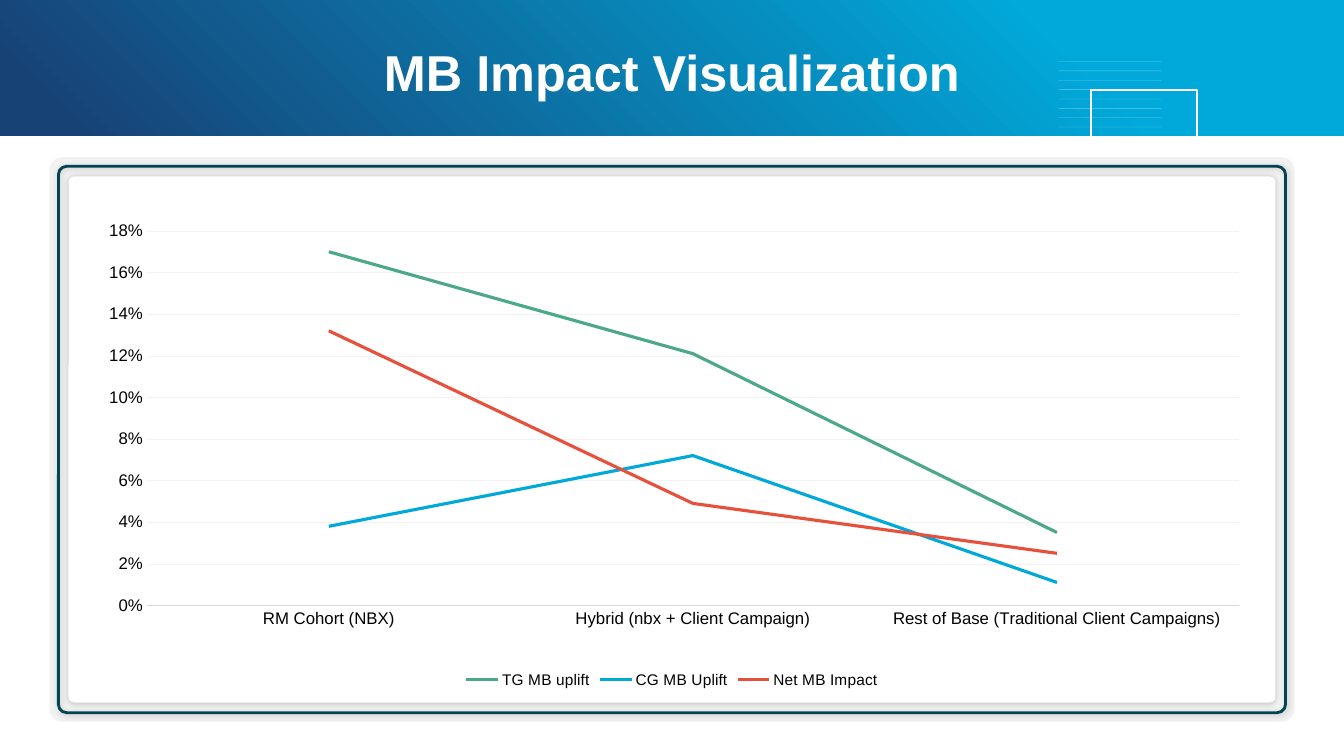
from lxml.etree import SubElement
from pptx import Presentation
from pptx.chart.data import CategoryChartData
from pptx.dml.color import RGBColor
from pptx.enum.chart import XL_CHART_TYPE, XL_LEGEND_POSITION, XL_TICK_MARK
from pptx.enum.shapes import MSO_CONNECTOR, MSO_SHAPE
from pptx.enum.text import MSO_ANCHOR, PP_ALIGN
from pptx.oxml import parse_xml
from pptx.oxml.ns import nsdecls, qn
from pptx.util import Inches, Pt

TITLE = "MB Impact Visualization"
CATEGORIES = [
    "RM Cohort (NBX)",
    "Hybrid (nbx + Client Campaign)",
    "Rest of Base (Traditional Client Campaigns)",
]
WHITE = RGBColor(0xFF, 0xFF, 0xFF)
BLACK = RGBColor(0, 0, 0)
PANEL_GREY = RGBColor(0xF2, 0xF2, 0xF2)
AXIS_GREY = RGBColor(0xD9, 0xD9, 0xD9)
FRAME_TEAL = RGBColor(0x00, 0x45, 0x54)
NAVY = RGBColor(0x17, 0x42, 0x76)
GREEN = RGBColor(0x4C, 0xA8, 0x8A)
CYAN = RGBColor(0x00, 0xA9, 0xDA)
RED = RGBColor(0xE7, 0x51, 0x3C)
SERIES = [
    ("TG MB uplift", (0.17, 0.121, 0.035), GREEN),
    ("CG MB Uplift", (0.038, 0.072, 0.011), CYAN),
    ("Net MB Impact", (0.132, 0.049, 0.025), RED),
]
# inset from the grey panel, corner ratio, fill, outline, has shadow
PANELS = [
    (0, 0.023, PANEL_GREY, None, False),
    (0.19, 0.011, WHITE, None, True),
    (0.09, 0.015, None, FRAME_TEAL, True),
]

FONT = "Arial"
WIDTH, HEIGHT = 13.33, 7.5
BANNER_HEIGHT = 0.18 * HEIGHT
MARGIN = 0.49
PANEL_TOP, PANEL_HEIGHT = 1.56, 5.6
PANEL_WIDTH = WIDTH - 2 * MARGIN
CHART_INSET_X, CHART_INSET_Y = 0.4, 0.29
PLOT_SHARES = {"x": 0.049, "y": 0.088, "w": 0.938, "h": 0.74}
STRIPE_LEFT, STRIPE_TOP, STRIPE_WIDTH = 10.5, 0.61, 1.02
STRIPE_COUNT, STRIPE_GAP = 8, 0.093
BRACKET_LEFT, BRACKET_TOP, BRACKET_WIDTH = 10.82, 0.89, 1.05


def add_box(slide, kind, left, top, width, height, fill=None, outline=None):
    shape = slide.shapes.add_shape(
        kind, Inches(left), Inches(top), Inches(width), Inches(height))
    shape.shadow.inherit = False
    if fill is None:
        shape.fill.background()
    else:
        shape.fill.solid()
        shape.fill.fore_color.rgb = fill
    if outline is None:
        shape.line.fill.background()
    else:
        shape.line.color.rgb = outline
        shape.line.width = Pt(2)
    return shape


def add_soft_shadow(shape):
    effects = shape._element.spPr.find(qn("a:effectLst"))
    effects.append(parse_xml(
        f'<a:outerShdw {nsdecls("a")} blurRad="{Pt(4)}" dist="{Pt(1)}" dir="2700000" '
        'algn="tl" rotWithShape="0"><a:srgbClr val="000000"><a:alpha val="20000"/>'
        '</a:srgbClr></a:outerShdw>'))


def add_background(slide):
    """Radial gradient over the slide, with white below the banner."""
    backdrop = add_box(slide, MSO_SHAPE.RECTANGLE, 0, 0, WIDTH, HEIGHT)
    properties = backdrop._element.spPr
    properties.find(qn("a:xfrm")).set("flipH", "1")
    stops = "".join(
        f'<a:gs pos="{share * 1000}"><a:srgbClr val="{color}"/></a:gs>'
        for share, color in ((33, NAVY), (85, CYAN), (100, CYAN)))
    properties.replace(properties.find(qn("a:noFill")), parse_xml(
        f'<a:gradFill {nsdecls("a")} rotWithShape="1"><a:gsLst>{stops}</a:gsLst>'
        '<a:path path="circle"><a:fillToRect t="100000" r="100000"/></a:path>'
        '<a:tileRect l="-100000" b="-100000"/></a:gradFill>'))
    add_box(slide, MSO_SHAPE.RECTANGLE, 0, BANNER_HEIGHT, WIDTH,
            HEIGHT - BANNER_HEIGHT, WHITE)


def add_banner_decoration(slide):
    for row in range(STRIPE_COUNT):
        y = Inches(STRIPE_TOP + row * STRIPE_GAP)
        stripe = slide.shapes.add_connector(
            MSO_CONNECTOR.STRAIGHT, Inches(STRIPE_LEFT), y,
            Inches(STRIPE_LEFT + STRIPE_WIDTH), y)
        stripe.line.color.rgb = WHITE
        stripe.line.width = Pt(0.25)
        properties = stripe._element.spPr
        color = next(properties.iter(qn("a:srgbClr")))
        SubElement(color, qn("a:alpha")).set("val", "40000")
        SubElement(properties, qn("a:effectLst"))

    right = BRACKET_LEFT + BRACKET_WIDTH
    builder = slide.shapes.build_freeform(
        Inches(BRACKET_LEFT), Inches(BANNER_HEIGHT))
    builder.add_line_segments(
        [(Inches(x), Inches(y)) for x, y in (
            (BRACKET_LEFT, BRACKET_TOP), (right, BRACKET_TOP), (right, BANNER_HEIGHT))],
        close=False)
    bracket = builder.convert_to_shape()
    bracket.shadow.inherit = False
    bracket.fill.background()
    bracket.line.color.rgb = WHITE
    bracket.line.width = Pt(1.19)


def add_title(slide):
    box = slide.shapes.add_textbox(
        Inches(MARGIN), Inches(0.39), Inches(PANEL_WIDTH), Inches(0.64))
    frame = box.text_frame
    frame.word_wrap = True
    frame.vertical_anchor = MSO_ANCHOR.MIDDLE
    frame.margin_top = frame.margin_bottom = 0
    frame.text = TITLE
    paragraph = frame.paragraphs[0]
    paragraph.alignment = PP_ALIGN.CENTER
    set_font(paragraph.runs[0].font, 36, WHITE)
    paragraph.runs[0].font.bold = True


def set_font(font, size, color=BLACK):
    font.name = FONT
    font.size = Pt(size)
    font.color.rgb = color


def add_panels(slide):
    for inset, corner, fill, outline, has_shadow in PANELS:
        panel = add_box(
            slide, MSO_SHAPE.ROUNDED_RECTANGLE, MARGIN + inset, PANEL_TOP + inset,
            PANEL_WIDTH - 2 * inset, PANEL_HEIGHT - 2 * inset, fill, outline)
        panel.adjustments[0] = corner
        if has_shadow:
            add_soft_shadow(panel)


def add_impact_chart(slide):
    data = CategoryChartData(number_format="0%")
    data.categories = CATEGORIES
    for name, values, _ in SERIES:
        data.add_series(name, values)
    chart = slide.shapes.add_chart(
        XL_CHART_TYPE.LINE, Inches(MARGIN + CHART_INSET_X),
        Inches(PANEL_TOP + CHART_INSET_Y), Inches(PANEL_WIDTH - 2 * CHART_INSET_X),
        Inches(PANEL_HEIGHT - 2 * CHART_INSET_Y), data).chart
    chart.has_title = False
    set_font(chart.font, 10)
    chart.has_legend = True
    chart.legend.position = XL_LEGEND_POSITION.BOTTOM
    chart.legend.include_in_layout = False
    set_font(chart.legend.font, 11)

    for axis in (chart.category_axis, chart.value_axis):
        axis.major_tick_mark = axis.minor_tick_mark = XL_TICK_MARK.NONE
        set_font(axis.tick_labels.font, 12)
    axis_line = chart.category_axis.format.line
    grid_line = chart.value_axis.major_gridlines.format.line
    for line, color in ((axis_line, AXIS_GREY), (grid_line, PANEL_GREY)):
        line.color.rgb = color
        line.width = Pt(0.25)
    values = chart.value_axis
    values.minimum_scale, values.maximum_scale, values.major_unit = 0, 0.18, 0.02
    values.tick_labels.number_format = "0%"
    values.tick_labels.number_format_is_linked = False
    values.format.line.fill.background()

    chart.plots[0].vary_by_categories = False
    for series, (_, _, color) in zip(chart.plots[0].series, SERIES):
        series.smooth = False
        series.format.line.color.rgb = color
        series.format.line.width = Pt(2.25)

    plot_area = chart._chartSpace.chart.plotArea
    for layout in plot_area.findall(qn("c:layout")):
        plot_area.remove(layout)
    shares = "".join(f'<c:{key} val="{share}"/>' for key, share in PLOT_SHARES.items())
    plot_area.insert(0, parse_xml(
        f'<c:layout {nsdecls("c")}><c:manualLayout><c:layoutTarget val="inner"/>'
        f'<c:xMode val="edge"/><c:yMode val="edge"/>{shares}</c:manualLayout></c:layout>'))


def main():
    presentation = Presentation()
    presentation.slide_width = Inches(WIDTH)
    presentation.slide_height = Inches(HEIGHT)
    slide = presentation.slides.add_slide(presentation.slide_layouts[6])
    add_background(slide)
    add_banner_decoration(slide)
    add_title(slide)
    add_panels(slide)
    add_impact_chart(slide)
    presentation.save("out.pptx")


if __name__ == "__main__":
    main()
